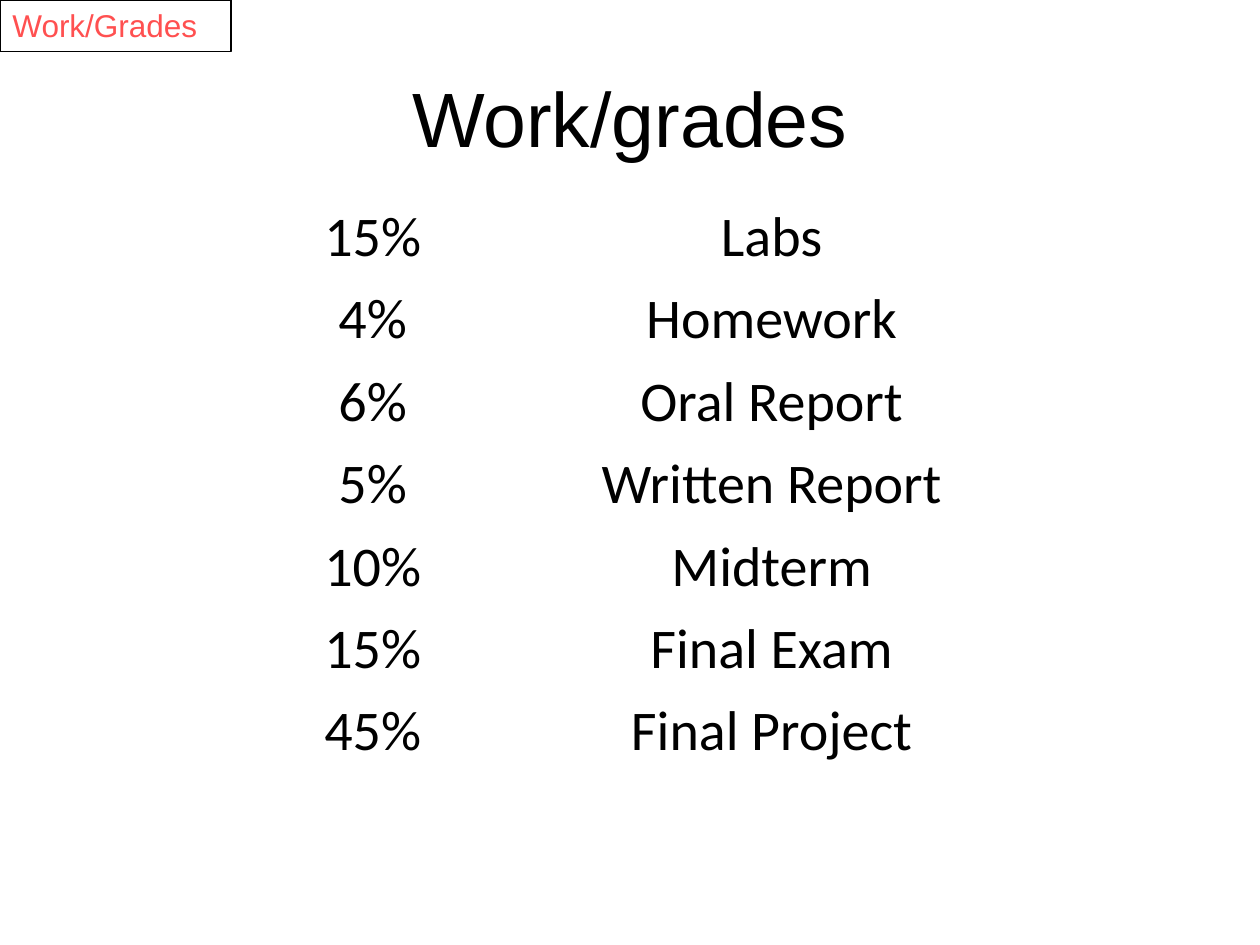
import pptx
import pptx.dml.color
import pptx.enum.shapes
import pptx.enum.text
import pptx.util

Pt = pptx.util.Pt
ALIGN = pptx.enum.text.PP_ALIGN
ANCHOR = pptx.enum.text.MSO_ANCHOR

TITLE = "Work/grades"
TAG = "Work/Grades"
GRADES = [
    ("15%", "Labs"),
    ("4%", "Homework"),
    ("6%", "Oral Report"),
    ("5%", "Written Report"),
    ("10%", "Midterm"),
    ("15%", "Final Exam"),
    ("45%", "Final Project"),
]
COLUMN_WIDTHS = (114, 342)
ROW_HEIGHT = 47.14
BLACK, RED = "000000", "FF5050"


def color(hex_string):
    return pptx.dml.color.RGBColor.from_string(hex_string)


def write(text_frame, text, font_name, size, font_color, alignment):
    paragraph = text_frame.paragraphs[0]
    paragraph.alignment = alignment
    run = paragraph.add_run()
    run.text = text
    run.font.name = font_name
    run.font.size = Pt(size)
    run.font.color.rgb = color(font_color)


def add_title(slide):
    title = slide.shapes.add_textbox(Pt(36), Pt(21.6), Pt(648), Pt(90))
    title.text_frame.word_wrap = True
    title.text_frame.vertical_anchor = ANCHOR.MIDDLE
    write(title.text_frame, TITLE, "Arial", 44, BLACK, ALIGN.CENTER)


def add_tag(slide):
    tag = slide.shapes.add_shape(
        pptx.enum.shapes.MSO_SHAPE.RECTANGLE, 0, 0, Pt(132), Pt(29.5))
    tag.shadow.inherit = False
    tag.fill.background()
    tag.line.color.rgb = color(BLACK)
    tag.line.width = Pt(0.75)
    tag.text_frame.vertical_anchor = ANCHOR.TOP
    write(tag.text_frame, TAG, "Arial", 18, RED, ALIGN.LEFT)


def add_grades(slide):
    table = slide.shapes.add_table(
        len(GRADES), len(COLUMN_WIDTHS), Pt(156), Pt(108),
        Pt(sum(COLUMN_WIDTHS)), Pt(ROW_HEIGHT * len(GRADES))).table
    table.first_row = False
    table.horz_banding = False
    for column, width in zip(table.columns, COLUMN_WIDTHS):
        column.width = Pt(width)
    for row, texts in zip(table.rows, GRADES):
        row.height = Pt(ROW_HEIGHT)
        for cell, text in zip(row.cells, texts):
            cell.fill.background()
            cell.vertical_anchor = ANCHOR.BOTTOM
            cell.margin_left = cell.margin_right = cell.margin_top = Pt(0.75)
            cell.margin_bottom = 0
            write(cell.text_frame, text, "Calibri", 32, BLACK, ALIGN.CENTER)


def main():
    presentation = pptx.Presentation()
    presentation.slide_width = Pt(720)
    presentation.slide_height = Pt(540)
    slide = presentation.slides.add_slide(presentation.slide_layouts[6])
    add_title(slide)
    add_tag(slide)
    add_grades(slide)
    presentation.save("out.pptx")


if __name__ == "__main__":
    main()
